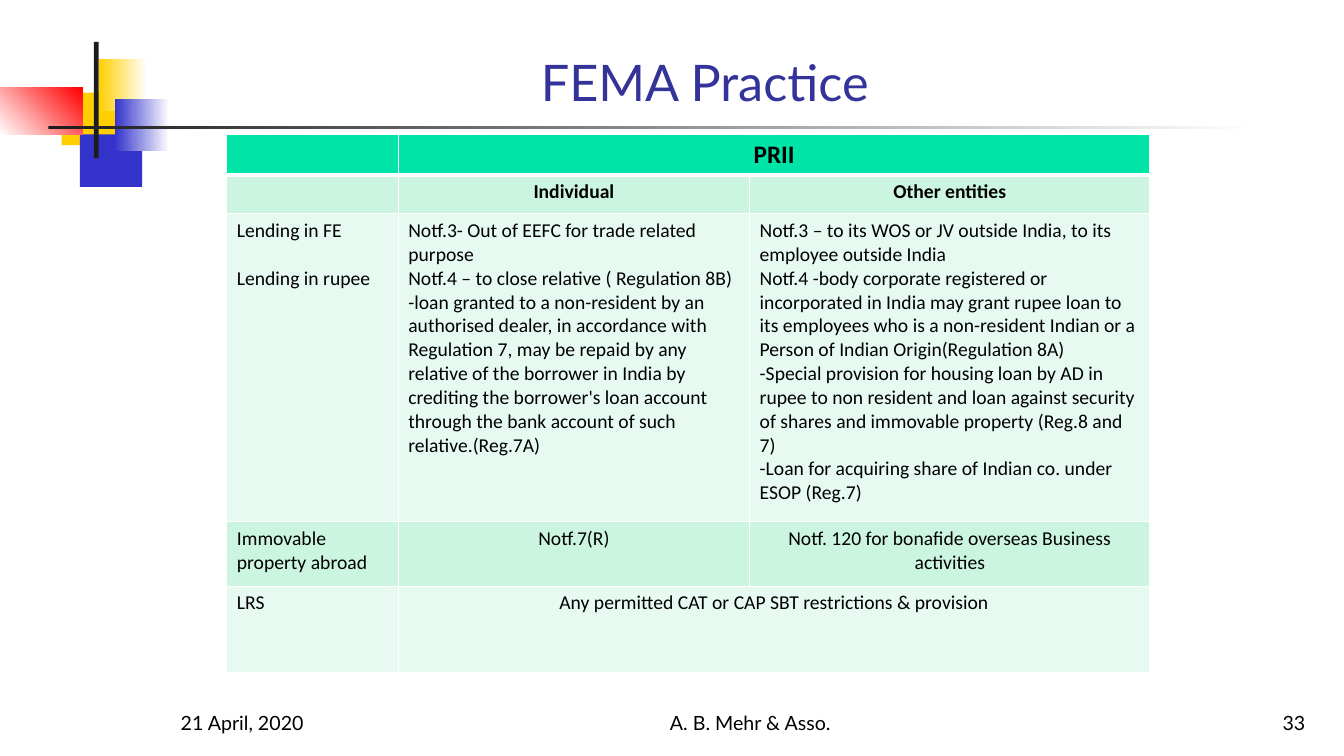
from dataclasses import dataclass

from lxml.etree import SubElement
from pptx import Presentation
from pptx.dml.color import RGBColor
from pptx.enum.shapes import MSO_SHAPE
from pptx.enum.text import MSO_ANCHOR, MSO_AUTO_SIZE, PP_ALIGN
from pptx.oxml import parse_xml
from pptx.oxml.ns import nsdecls, qn
from pptx.util import Pt


@dataclass(frozen=True)
class Theme:
    heading_font: str = "Lato"
    table_font: str = "Calibri"
    title_size: int = 36
    header_size: int = 18
    text_size: int = 14
    title: str = "333399"
    text: str = "000000"
    white: str = "FFFFFF"
    yellow: str = "FFCF01"
    blue: str = "3333CC"
    red: str = "FF0000"
    dark: str = "1C1C1C"
    header: str = "00E4A8"
    band: str = "CCF5E1"
    pale: str = "E7FAF1"


def write(text_frame, text, *, font, size, color, bold=False,
          align=PP_ALIGN.LEFT, space_before=0):
    for index, line in enumerate(text.split("\n")):
        paragraph = text_frame.paragraphs[0] if index == 0 else text_frame.add_paragraph()
        paragraph.alignment = align
        if not line:
            SubElement(paragraph._p, qn("a:endParaRPr")).set("sz", str(size * 100))
            continue
        paragraph.space_before = Pt(space_before if index else 0)
        run = paragraph.add_run()
        run.text = line
        run.font.name = font
        run.font.size = Pt(size)
        run.font.bold = bold
        run.font.color.rgb = RGBColor.from_string(color)


class SlideBuilder:
    def __init__(self, slide, theme):
        self.slide = slide
        self.theme = theme

    def block(self, left, top, width, height, *colors, angle=0):
        shape = self.slide.shapes.add_shape(
            MSO_SHAPE.RECTANGLE, Pt(left), Pt(top), Pt(width), Pt(height))
        shape.shadow.inherit = False
        shape.line.fill.background()
        if len(colors) == 1:
            shape.fill.solid()
            shape.fill.fore_color.rgb = RGBColor.from_string(colors[0])
            return
        shape.fill.gradient()
        shape.fill.gradient_angle = angle
        for stop, color in zip(shape.fill.gradient_stops, colors):
            stop.color.rgb = RGBColor.from_string(color)

    def title(self, text, left, top, width, height):
        title = self.slide.shapes.title
        title.left, title.top, title.width, title.height = map(Pt, (left, top, width, height))
        title.text_frame.vertical_anchor = MSO_ANCHOR.BOTTOM
        title.text_frame.auto_size = MSO_AUTO_SIZE.NONE
        write(title.text_frame, text, font=self.theme.heading_font,
              size=self.theme.title_size, color=self.theme.title, align=PP_ALIGN.CENTER)

    def footer(self, text, left, width, align):
        shape = self.slide.shapes.add_textbox(Pt(left), Pt(492), Pt(width), Pt(36))
        shape.text_frame.word_wrap = True
        shape.text_frame.vertical_anchor = MSO_ANCHOR.BOTTOM
        write(shape.text_frame, text, font=self.theme.heading_font,
              size=self.theme.text_size, color=self.theme.text, align=align)

    def cell_borders(self, cell, bottom):
        properties = cell._tc.get_or_add_tcPr()
        for index, (side, width) in enumerate(
                (("lnL", 1), ("lnR", 1), ("lnT", 1), ("lnB", bottom))):
            properties.insert(index, parse_xml(
                f'<a:{side} {nsdecls("a")} w="{Pt(width)}"><a:solidFill>'
                f'<a:srgbClr val="{self.theme.white}"/></a:solidFill></a:{side}>'))

    def table(self, rows, left, top, widths, heights, fills, centered, merged):
        table = self.slide.shapes.add_table(
            len(rows), len(widths), Pt(left), Pt(top),
            Pt(sum(widths)), Pt(sum(heights))).table
        table.first_row = table.horz_banding = False
        for column, width in zip(table.columns, widths):
            column.width = Pt(width)
        for row_index, (row, height) in enumerate(zip(rows, heights)):
            table.rows[row_index].height = Pt(height)
            is_header = row_index == 0
            for column_index, text in enumerate(row):
                cell = table.cell(row_index, column_index)
                cell.fill.solid()
                cell.fill.fore_color.rgb = RGBColor.from_string(fills[row_index])
                self.cell_borders(cell, 3 if is_header else 1)
                is_centered = column_index > 0 and row_index in centered
                write(cell.text_frame, text, font=self.theme.table_font,
                      size=self.theme.header_size if is_header else self.theme.text_size,
                      color=self.theme.text, bold=row_index < 2,
                      align=PP_ALIGN.CENTER if is_centered else PP_ALIGN.LEFT,
                      space_before=0 if column_index else 17)
        for row_index in merged:
            table.cell(row_index, 1).merge(table.cell(row_index, 2))


ROWS = [
    ["", "PRII", ""],
    ["", "Individual", "Other entities"],
    [
        "Lending in FE\nLending in rupee",
        "Notf.3- Out of EEFC for trade related purpose\n"
        "Notf.4 – to close relative ( Regulation 8B)\n"
        "-loan granted to a non-resident by an authorised dealer, in accordance with "
        "Regulation 7, may be repaid by any relative of the borrower in India by "
        "crediting the borrower's loan account through the bank account of such "
        "relative.(Reg.7A)",
        "Notf.3 – to its WOS or JV outside India, to its employee outside India\n"
        "Notf.4 -body corporate registered or incorporated in India may grant rupee "
        "loan to its employees who is a non-resident Indian or a Person of Indian "
        "Origin(Regulation 8A)\n"
        "-Special provision for housing loan by AD in rupee to non resident and loan "
        "against security of shares and immovable property (Reg.8 and 7)\n"
        "-Loan for acquiring share of Indian co. under ESOP (Reg.7)",
    ],
    ["Immovable property abroad", "Notf.7(R)",
     "Notf. 120 for bonafide overseas Business activities"],
    ["LRS", "Any permitted CAT or CAP SBT restrictions & provision", ""],
]


def main():
    presentation = Presentation()
    presentation.slide_width, presentation.slide_height = Pt(960), Pt(540)
    slide = presentation.slides.add_slide(presentation.slide_layouts[5])
    theme = Theme()
    builder = SlideBuilder(slide, theme)

    builder.block(44, 66.2, 46, 37.5, theme.yellow)
    builder.block(57, 96, 44.5, 37.5, theme.blue)
    builder.block(70.5, 42, 34.5, 37.5, theme.yellow, theme.white)
    builder.block(82, 70.5, 39, 37.5, theme.blue, theme.white)
    builder.block(0, 62.5, 59, 33.5, theme.white, theme.red, angle=45)
    builder.block(67, 30, 3.5, 83, theme.dark)
    builder.block(34.5, 90, 864, 2.2, theme.dark, theme.white)

    builder.title("FEMA Practice ", 192, 16.5, 632, 67)
    builder.table(
        ROWS, 162, 96, widths=[122.5, 251, 286], heights=[29, 27.5, 220, 46, 62],
        fills=[theme.header, theme.band, theme.pale, theme.band, theme.pale],
        centered={0, 1, 3, 4}, merged=(0, 4))
    builder.footer("21 April, 2020", 122, 200, PP_ALIGN.LEFT)
    builder.footer("A. B. Mehr & Asso.", 384, 304, PP_ALIGN.CENTER)
    builder.footer("33", 739.5, 200, PP_ALIGN.RIGHT)

    presentation.save("out.pptx")


if __name__ == "__main__":
    main()
